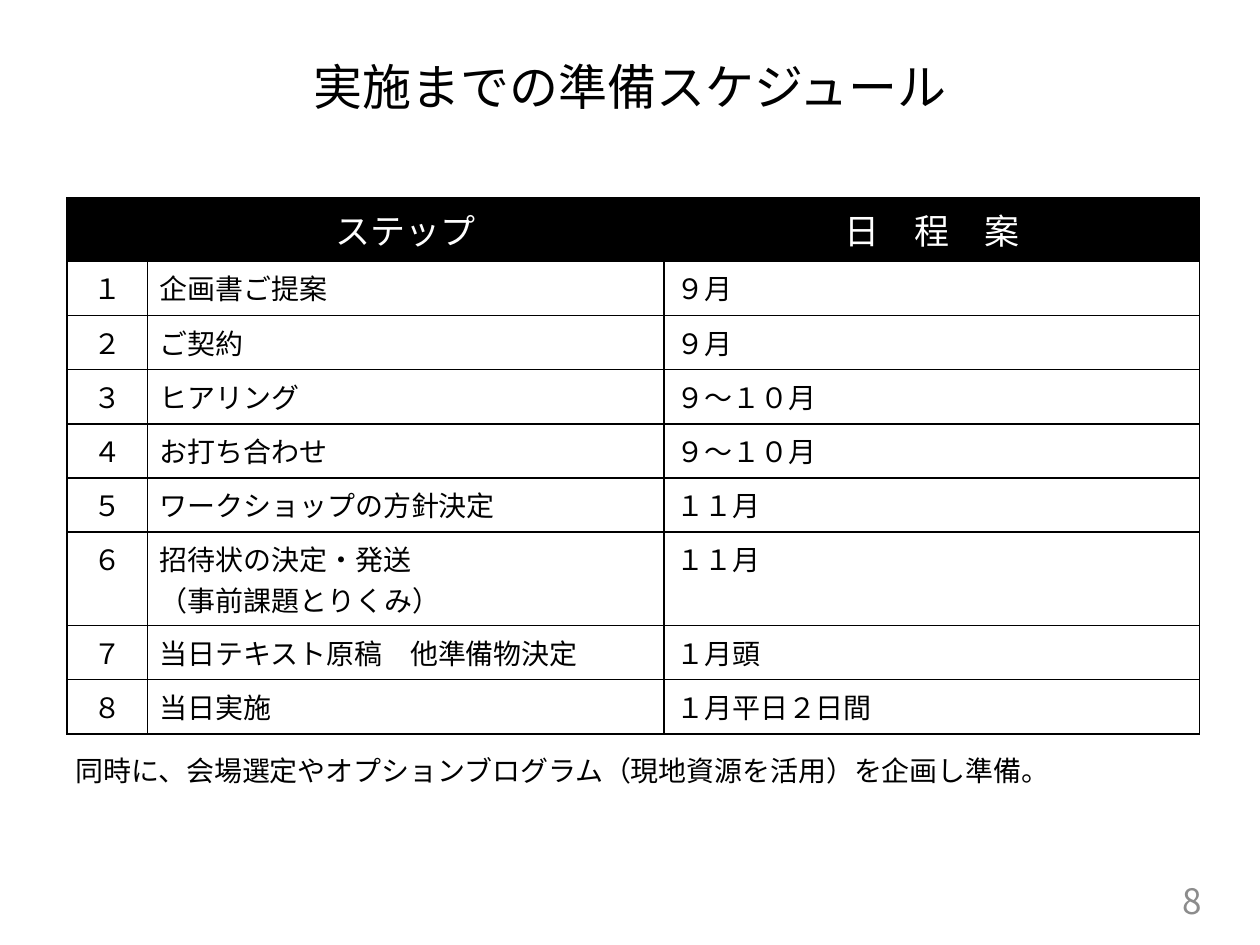
from lxml.etree import SubElement
from pptx import Presentation
from pptx.dml.color import RGBColor
from pptx.enum.text import MSO_ANCHOR as Anchor, PP_ALIGN as Align
from pptx.oxml.ns import qn
from pptx.util import Inches, Pt

FONT = "Noto Sans CJK JP"
BLACK = RGBColor(0x00, 0x00, 0x00)
WHITE = RGBColor(0xFF, 0xFF, 0xFF)
GRAY = RGBColor(0x8C, 0x8C, 0x8C)


def write(frame, text, size, color=BLACK, align=Align.LEFT):
    for index, line in enumerate(text.split("\n")):
        para = frame.add_paragraph() if index else frame.paragraphs[0]
        para.alignment = align
        span = para.add_run()
        span.text = line
        span.font.color.rgb = color
        for name, value in {"size": Pt(size), "name": FONT, "bold": False}.items():
            setattr(span.font, name, value)
        SubElement(span.font._element, qn("a:ea"), typeface=FONT)


def add_borders(cell):
    properties = cell._tc.get_or_add_tcPr()
    for side in ("lnL", "lnR", "lnT", "lnB"):
        line = SubElement(properties, qn(f"a:{side}"), w=str(Pt(1)))
        fill = SubElement(line, qn("a:solidFill"))
        SubElement(fill, qn("a:srgbClr"), val=str(BLACK))


deck = Presentation()
deck.slide_width, deck.slide_height = Inches(10), Inches(7.5)
page = deck.slides.add_slide(deck.slide_layouts[5])

title = page.shapes.title
title_place = {"left": 0.5, "top": 0.29, "width": 9, "height": 0.79}
for name, value in title_place.items():
    setattr(title, name, Inches(value))
title.text_frame.vertical_anchor = Anchor.MIDDLE
write(title.text_frame, "実施までの準備スケジュール", 28, align=Align.CENTER)

header = ("", "ステップ", "日　程　案")
steps = [
    ("１", "企画書ご提案", "９月"),
    ("２", "ご契約", "９月"),
    ("３", "ヒアリング", "９～１０月"),
    ("４", "お打ち合わせ", "９～１０月"),
    ("５", "ワークショップの方針決定", "１１月"),
    ("６", "招待状の決定・発送\n（事前課題とりくみ）", "１１月"),
    ("７", "当日テキスト原稿　他準備物決定", "１月頭"),
    ("８", "当日実施", "１月平日２日間"),
]
rows = [header] + steps
schedule = page.shapes.add_table(
    len(rows), len(header), Inches(0.53), Inches(1.57), Inches(9), Inches(4.1)
).table
schedule.horz_banding = False
for column, width in zip(schedule.columns, (0.64, 4.1, 4.25)):
    column.width = Inches(width)

for row_index, row in enumerate(rows):
    is_header = row_index == 0
    schedule.rows[row_index].height = Inches(0.43)
    for column_index, text in enumerate(row):
        cell = schedule.cell(row_index, column_index)
        add_borders(cell)
        if is_header:
            cell.fill.solid()
            cell.fill.fore_color.rgb = BLACK
        else:
            cell.fill.background()
        if text:
            centered = is_header or column_index == 0
            write(
                cell.text_frame,
                text,
                20 if is_header else 16,
                WHITE if is_header else BLACK,
                Align.CENTER if centered else Align.LEFT,
            )

note = page.shapes.add_textbox(Inches(0.52), Inches(5.93), Inches(8.93), Inches(0.47))
note.text_frame.word_wrap = True
note.text_frame.margin_left = Inches(0.08)
write(note.text_frame, "同時に、会場選定やオプションブログラム（現地資源を活用）を企画し準備。", 16)

number = page.shapes.add_textbox(Inches(7.31), Inches(6.95), Inches(2.33), Inches(0.4))
number.text_frame.word_wrap = True
number.text_frame.vertical_anchor = Anchor.MIDDLE
write(number.text_frame, "8", 20, GRAY, Align.RIGHT)

deck.save("out.pptx")
